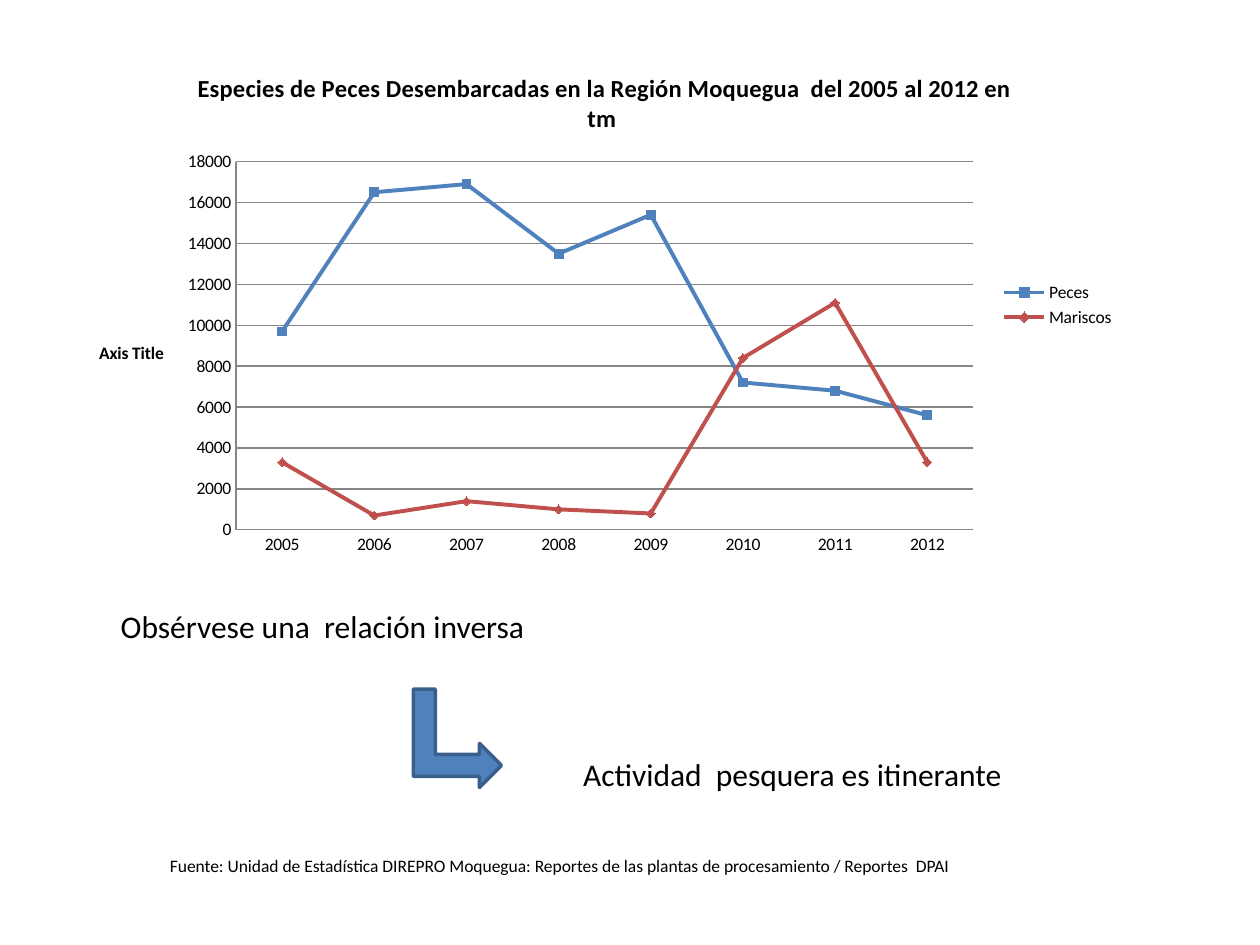
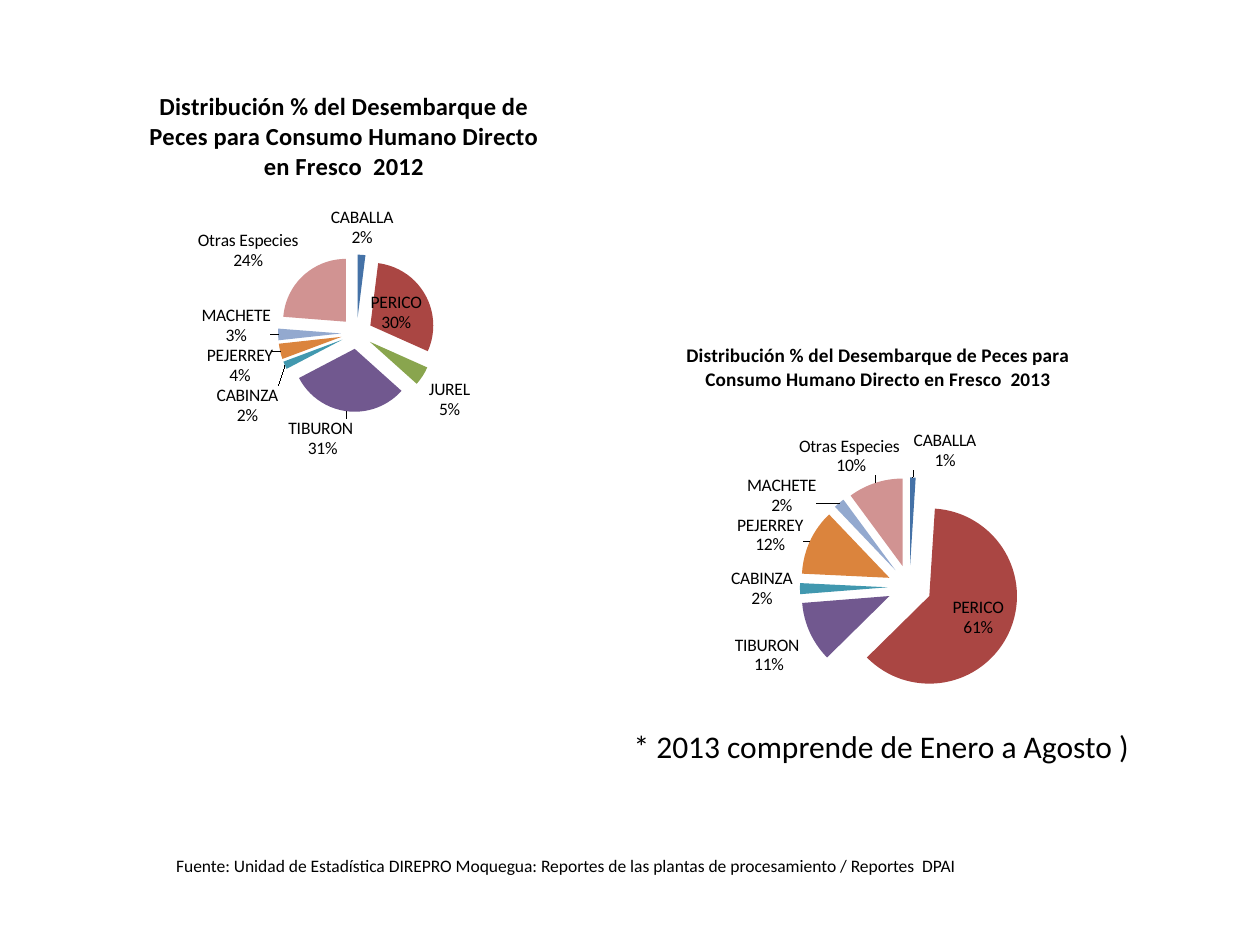
"""Build two slides on fish landings in the Moquegua region."""
from lxml.etree import SubElement
from pptx import Presentation
from pptx.chart.data import CategoryChartData
from pptx.dml.color import RGBColor
from pptx.enum.chart import XL_CHART_TYPE, XL_LABEL_POSITION, XL_LEGEND_POSITION, XL_TICK_MARK
from pptx.enum.shapes import MSO_SHAPE
from pptx.enum.text import MSO_AUTO_SIZE
from pptx.oxml.ns import qn
from pptx.util import Inches, Pt

WIDTH, HEIGHT = Inches(10), Inches(7.5)
COLUMNS, ROWS = 100, 75
FONT = "Calibri"
COLORS = {
    "text": "000000", "grid": "868686",
    "fish": "4F81BD", "shellfish": "C0504D",
    "arrow": "4F81BD", "arrow_edge": "3A5F8C",
}
SPECIES_COLORS = {
    "CABALLA": "4572A7", "PERICO": "AA4643", "JUREL": "89A54E", "TIBURON ": "71588F",
    "CABINZA": "4198AF", "PEJERREY": "DB843D", "MACHETE": "93A9CF", "Otras Especies ": "D19392",
}
SOURCE = ("Fuente: Unidad de Estadística DIREPRO Moquegua: "
          "Reportes de las plantas de procesamiento / Reportes  DPAI")
PIE_TITLE = "Distribución % del Desembarque de Peces para Consumo Humano Directo en Fresco  "


def color(value):
    """Turn a hex string into a colour."""
    return RGBColor.from_string(value)


def grid(column, row, columns, rows):
    """Convert grid cells to left, top, width and height."""
    across, down = WIDTH / COLUMNS, HEIGHT / ROWS
    return [round(length) for length in (column * across, row * down, columns * across, rows * down)]


def set_font(font, size=10, bold=False):
    """Apply the shared typeface and text colour."""
    font.name, font.size, font.bold = FONT, Pt(size), bold
    font.color.rgb = color(COLORS["text"])


def write(frame, text, **style):
    """Write one formatted span into a text frame."""
    span = frame.paragraphs[0].add_run()
    span.text = text
    set_font(span.font, **style)


def add_text(page, cells, text, size=18, wrap=False):
    """Add a text box that grows with its text."""
    frame = page.shapes.add_textbox(*grid(*cells)).text_frame
    frame.word_wrap = wrap
    frame.auto_size = MSO_AUTO_SIZE.SHAPE_TO_FIT_TEXT
    write(frame, text, size=size)


def add_source(page, column):
    """Add the source line at the foot of a slide."""
    add_text(page, (column, 67.4, 72, 2.7), SOURCE, size=10, wrap=True)


def add_arrow(page, cells):
    """Add the bent arrow that links two statements."""
    arrow = page.shapes.add_shape(MSO_SHAPE.BENT_UP_ARROW, *grid(*cells))
    arrow.rotation = 90
    arrow.shadow.inherit = False
    arrow.fill.solid()
    arrow.fill.fore_color.rgb = color(COLORS["arrow"])
    arrow.line.color.rgb = color(COLORS["arrow_edge"])
    arrow.line.width = Pt(2)


def place_plot(chart, shares):
    """Fix the inner plot area as shares of the chart's size."""
    plot_area = chart.plots[0]._element.getparent()
    for old in plot_area.findall(qn("c:layout")):
        plot_area.remove(old)
    layout = SubElement(plot_area, qn("c:layout"))
    plot_area.insert(0, layout)
    manual = SubElement(layout, qn("c:manualLayout"))
    settings = [("layoutTarget", "inner"), ("xMode", "edge"), ("yMode", "edge")]
    for name, value in settings + list(zip("xywh", shares)):
        SubElement(manual, qn(f"c:{name}")).set("val", str(value))


def add_chart(page, kind, cells, title, categories, series, title_size, plot_shares):
    """Add a chart with its title, font and plot area."""
    data = CategoryChartData(number_format="0")
    data.categories = categories
    for name, values in series.items():
        data.add_series(name, values)
    chart = page.shapes.add_chart(kind, *grid(*cells), data).chart
    set_font(chart.font)
    chart.has_legend = False
    chart.has_title = True
    write(chart.chart_title.text_frame, title, size=title_size, bold=True)
    place_plot(chart, plot_shares)
    return chart


def add_line_chart(page, cells, title, years, landings):
    """Add the line chart of yearly landings."""
    chart = add_chart(page, XL_CHART_TYPE.LINE, cells, title, years, landings, 14,
                      (0.15, 0.22, 0.7, 0.72))
    chart.has_legend = True
    chart.legend.position = XL_LEGEND_POSITION.RIGHT
    chart.legend.include_in_layout = False
    tonnes = chart.value_axis
    for axis in (chart.category_axis, tonnes):
        axis.major_tick_mark = axis.minor_tick_mark = XL_TICK_MARK.NONE
        axis.format.line.color.rgb = color(COLORS["grid"])
    tonnes.minimum_scale, tonnes.maximum_scale, tonnes.major_unit = 0, 18000, 2000
    tonnes.has_major_gridlines = True
    tonnes.major_gridlines.format.line.color.rgb = color(COLORS["grid"])
    tonnes.has_title = True
    caption = tonnes.axis_title.text_frame
    write(caption, "Axis Title", bold=True)
    caption._txBody.bodyPr.set("rot", "0")
    caption._txBody.bodyPr.set("vert", "horz")
    for line, name in zip(chart.plots[0].series, ("fish", "shellfish")):
        line.smooth = False
        line.marker.style = None
        line.format.line.color.rgb = color(COLORS[name])
        line.format.line.width = Pt(2.25)


def add_species_pie(page, cells, year, shares, title_size, plot_shares):
    """Add an exploded pie of landings by species."""
    chart = add_chart(page, XL_CHART_TYPE.PIE, cells, f"{PIE_TITLE}{year}", list(SPECIES_COLORS),
                      {"Series 1": shares}, title_size, plot_shares)
    chart.plots[0].vary_by_categories = True
    series = chart.plots[0].series[0]
    explosion = SubElement(series._element, qn("c:explosion"))
    explosion.set("val", "25")
    series._element.find(qn("c:tx")).addnext(explosion)
    for index, value in enumerate(SPECIES_COLORS.values()):
        fill = series.points[index].format.fill
        fill.solid()
        fill.fore_color.rgb = color(value)
    labels = series.data_labels
    set_font(labels.font)
    labels.number_format, labels.number_format_is_linked = '0"%"', False
    labels.show_category_name = labels.show_value = True
    labels.position = XL_LABEL_POSITION.BEST_FIT
    separator = SubElement(labels._element, qn("c:separator"))
    separator.text = "\n"
    labels._element.find(qn("c:showBubbleSize")).addnext(separator)


def build_landings(page):
    """Build the slide on yearly landings."""
    add_text(page, (8.6, 47.7, 35, 4), "Obsérvese una  relación inversa")
    add_text(page, (45.3, 59.4, 36.2, 4), "Actividad  pesquera es itinerante")
    add_arrow(page, (32.4, 55.1, 7.8, 7))
    add_line_chart(
        page, (6.2, 3.9, 83.6, 40.6),
        "Especies de Peces Desembarcadas en la Región Moquegua  del 2005 al 2012 en tm ",
        [str(year) for year in range(2005, 2013)],
        {"Peces ": (9700, 16500, 16900, 13500, 15400, 7200, 6800, 5600),
         "Mariscos ": (3300, 700, 1400, 1000, 800, 8400, 11100, 3300)})
    add_source(page, 12.5)


def build_species(page):
    """Build the slide on the species of each year."""
    add_species_pie(page, (7, 5.5, 40.6, 32), 2012, (2, 30, 5, 31, 2, 4, 3, 24), 14,
                    (0.37, 0.46, 0.31, 0.39))
    add_species_pie(page, (49, 25.7, 41.4, 32.9), 2013, (1, 61, 0, 11, 2, 12, 2, 10), 11,
                    (0.35, 0.37, 0.42, 0.53))
    add_text(page, (49.3, 57.2, 41.8, 4), "* 2013 comprende de Enero a Agosto )")
    add_source(page, 13)


def main():
    """Build and save the deck."""
    deck = Presentation()
    deck.slide_width, deck.slide_height = WIDTH, HEIGHT
    for build in (build_landings, build_species):
        build(deck.slides.add_slide(deck.slide_layouts[6]))
    deck.save("out.pptx")


if __name__ == "__main__":
    main()
